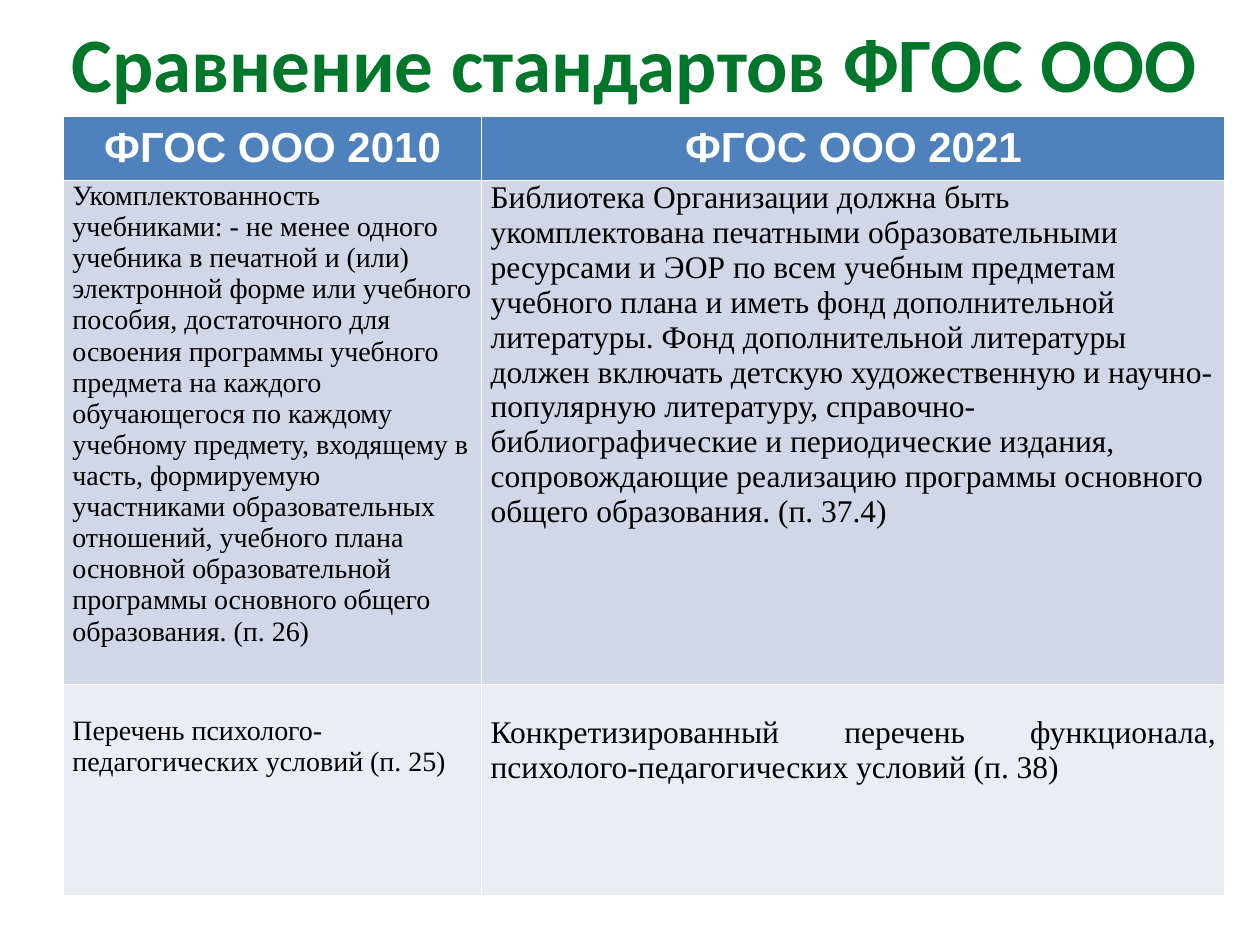
from dataclasses import dataclass
from pptx import Presentation
from pptx.dml.color import RGBColor
from pptx.enum.text import MSO_ANCHOR, PP_ALIGN
from pptx.util import Cm, Pt


@dataclass(frozen=True)
class Theme:
    green: str = "00762A"
    blue: str = "4F81BD"
    band: str = "D0D8E8"
    pale: str = "E9EDF4"
    white: str = "FFFFFF"
    black: str = "000000"
    title: int = 44
    head: int = 24
    left: int = 16
    right: int = 18


THEME = Theme()

HEADS = ["ФГОС ООО 2010", "ФГОС ООО 2021"]
BOOKS = [
    "Укомплектованность учебниками: - не менее одного учебника в печатной и (или) "
    "электронной форме или учебного пособия, достаточного для освоения программы "
    "учебного предмета на каждого обучающегося по каждому учебному предмету, "
    "входящему в часть, формируемую участниками образовательных отношений, учебного "
    "плана основной образовательной программы основного общего образования. (п. 26)",
    "Библиотека Организации должна быть укомплектована печатными образовательными "
    "ресурсами и ЭОР по всем учебным предметам учебного плана и иметь фонд "
    "дополнительной литературы. Фонд дополнительной литературы должен включать "
    "детскую художественную и научно-популярную литературу, "
    "справочно-библиографические и периодические издания, сопровождающие реализацию "
    "программы основного общего образования. (п. 37.4)",
]
TERMS = [
    "Перечень психолого-педагогических условий (п. 25)",
    "Конкретизированный перечень функционала, психолого-педагогических условий (п. 38)",
]


def write(frame, text, face, size, color, bold=False, align=PP_ALIGN.LEFT):
    line = frame.paragraphs[0]
    line.text = text
    line.alignment = align
    font = line.font
    font.name, font.size, font.bold = face, Pt(size), bold
    font.color.rgb = RGBColor.from_string(color)


def paint(cell, color):
    cell.fill.solid()
    cell.fill.fore_color.rgb = RGBColor.from_string(color)


def add_title(slide, box, text):
    frame = slide.shapes.add_textbox(*map(Cm, box)).text_frame
    frame.word_wrap = True
    frame.vertical_anchor = MSO_ANCHOR.MIDDLE
    write(frame, text, "Calibri", THEME.title, THEME.green, True, PP_ALIGN.CENTER)


def fill_head(row):
    for cell, text in zip(row.cells, HEADS):
        paint(cell, THEME.blue)
        cell.vertical_anchor = MSO_ANCHOR.MIDDLE
        write(cell.text_frame, text, "Arial", THEME.head, THEME.white, True,
              PP_ALIGN.CENTER)


def fill_row(row, texts, color, top=0, last=PP_ALIGN.LEFT):
    sizes = (THEME.left, THEME.right)
    aligns = (PP_ALIGN.LEFT, last)
    for cell, text, size, align in zip(row.cells, texts, sizes, aligns):
        paint(cell, color)
        cell.margin_left = cell.margin_right = Cm(0.18)
        cell.margin_top, cell.margin_bottom = Cm(top), Cm(0)
        write(cell.text_frame, text, "Times New Roman", size, THEME.black, align=align)


def add_grid(slide, box):
    x, y, width, height = box
    table = slide.shapes.add_table(3, 2, Cm(x), Cm(y), Cm(width), Cm(height)).table
    for column, share in zip(table.columns, (0.36, 0.64)):
        column.width = Cm(width * share)
    head, books = 1.3, 9.37
    for row, tall in zip(table.rows, (head, books, height - head - books)):
        row.height = Cm(tall)
    fill_head(table.rows[0])
    fill_row(table.rows[1], BOOKS, THEME.band)
    fill_row(table.rows[2], TERMS, THEME.pale, 0.62, PP_ALIGN.JUSTIFY)


def main():
    deck = Presentation()
    deck.slide_width, deck.slide_height = Cm(25.4), Cm(19.05)
    slide = deck.slides.add_slide(deck.slide_layouts[6])
    add_title(slide, (0.9, 0.76, 23.8, 0.97), "Сравнение стандартов ФГОС ООО")
    add_grid(slide, (1.28, 2.34, 23.42, 14.94))
    deck.save("out.pptx")


if __name__ == "__main__":
    main()
